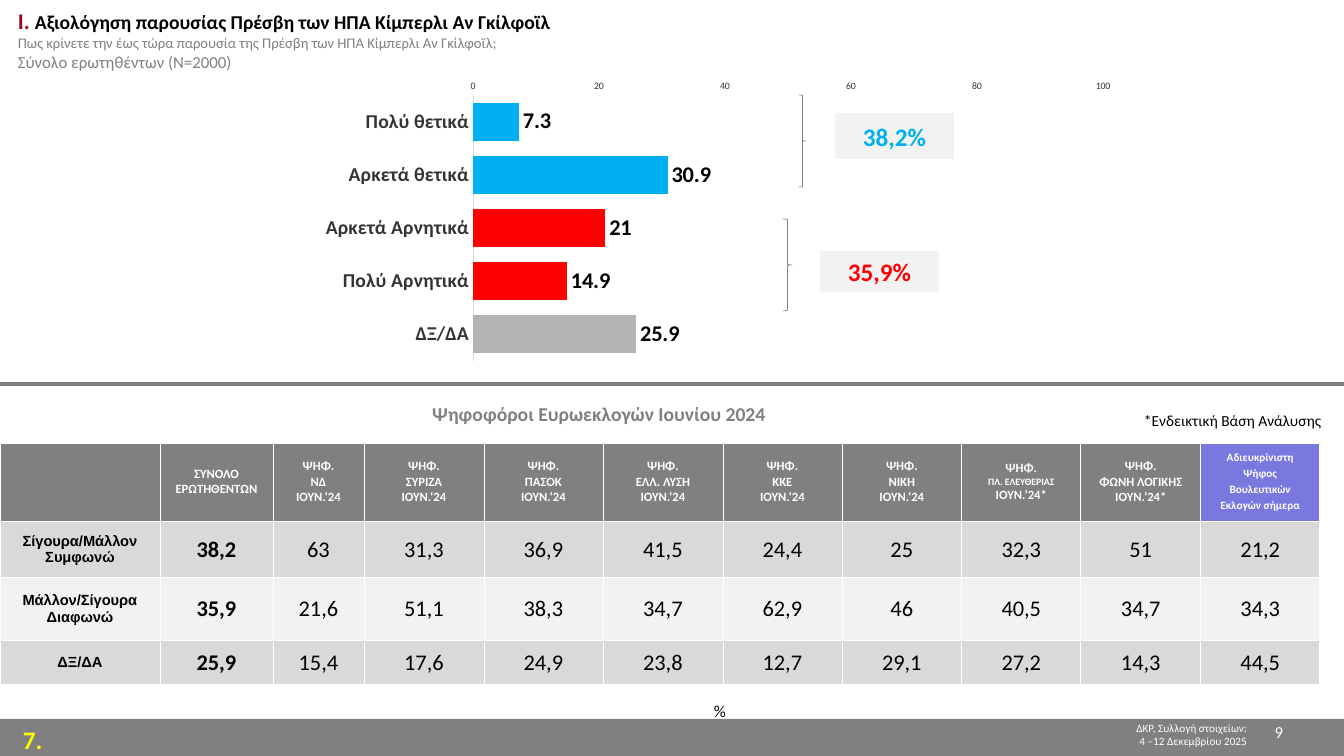
from lxml import etree
from pptx import Presentation
from pptx import util as u
from pptx.chart.data import CategoryChartData
from pptx.dml.color import RGBColor
from pptx.enum import chart as ch, shapes, text
from pptx.oxml import parse_xml
from pptx.oxml.ns import nsdecls, qn

PX = 914400 / 100.8
COLORS = {
    "white": "FFFFFF", "black": "000000", "gray": "808080", "dark": "333333",
    "yellow": "FFFF00", "maroon": "A50021", "positive": "00B0F0", "negative": "FF0000",
    "undecided": "B3B3B3", "axis": "D9D9D9", "band": "D9D9D9", "light": "F2F2F2",
    "violet": "7878DE",
}
C = {name: RGBColor.from_string(value) for name, value in COLORS.items()}
LEFT, CENTER, RIGHT = text.PP_ALIGN.LEFT, text.PP_ALIGN.CENTER, text.PP_ALIGN.RIGHT


def px(*lengths):
    return [u.Emu(round(n * PX)) for n in lengths]


def write(tf, lines, size, color, bold=False, align=LEFT, font="Calibri", gap=0):
    """Fill a text frame with one paragraph per line; gap is in points, between lines."""
    for i, line in enumerate(lines):
        p = tf.paragraphs[0] if i == 0 else tf.add_paragraph()
        p.alignment = align
        if i and gap:
            p.space_before = u.Pt(gap)
        p.font.name, p.font.size, p.font.bold = font, u.Pt(size), bold
        p.font.color.rgb = C[color]
        p.add_run().text = line


prs = Presentation()
prs.slide_width, prs.slide_height = px(1344, 756)
s = prs.slides.add_slide(prs.slide_layouts[6])

# Rectangles: footer band, title panel and the two totals
panels = {}
for name, box, fill in [
    ("footer", (0, 719, 1344, 37), "gray"),
    ("title", (8, 2, 1312, 92), "white"),
    ("38,2%", (835, 113, 119, 46), "light"),
    ("35,9%", (820, 251, 119, 41), "light"),
]:
    sp = s.shapes.add_shape(shapes.MSO_SHAPE.RECTANGLE, *px(*box))
    sp.shadow.inherit = False
    sp.fill.solid()
    sp.fill.fore_color.rgb = C[fill]
    sp.line.fill.background()
    panels[name] = sp

# Title panel
tf = panels["title"].text_frame
tf.word_wrap = True
tf.vertical_anchor = text.MSO_ANCHOR.TOP
p = tf.paragraphs[0]
p.alignment = LEFT
p.font.name, p.font.bold = "Calibri", True
for words, size, color in [
    ("Ι. ", 16, "maroon"),
    ("Αξιολόγηση παρουσίας Πρέσβη των ΗΠΑ Κίμπερλι Αν Γκίλφοϊλ", 14, "black"),
]:
    r = p.add_run()
    r.text = words
    r.font.size = u.Pt(size)
    r.font.color.rgb = C[color]
for line, size in [
    ("Πως κρίνετε την έως τώρα παρουσία της Πρέσβη των ΗΠΑ Κίμπερλι Αν Γκίλφοϊλ;", 10.5),
    ("Σύνολο ερωτηθέντων (Ν=2000)", 12),
]:
    p = tf.add_paragraph()
    p.alignment = LEFT
    p.font.name, p.font.size = "Calibri", u.Pt(size)
    p.font.color.rgb = C["gray"]
    p.add_run().text = line

# Text boxes
for box, lines, size, color, bold, align, wrap in [
    ((966, 716, 291, 37), ["ΔΚΡ, Συλλογή στοιχείων:", "4 –12 Δεκεμβρίου 2025"],
     8, "white", False, RIGHT, True),
    ((13, 719, 68, 40), ["7."], 18, "yellow", True, LEFT, True),
    ((704, 696, 32, 30), ["%"], 12, "black", False, LEFT, False),
    ((1013, 717, 280, 39), ["9"], 12, "white", False, RIGHT, True),
    ((267, 397, 664, 34), ["Ψηφοφόροι Ευρωεκλογών Ιουνίου 2024"], 14, "gray", True, CENTER, True),
    ((1134, 406, 203, 29), ["*Ενδεικτική Βάση Ανάλυσης"], 11, "black", False, LEFT, False),
]:
    tf = s.shapes.add_textbox(*px(*box)).text_frame
    tf.word_wrap = wrap
    write(tf, lines, size, color, bold, align)

# Table of voters by party
JUNE, JUNE_STAR = "ΙΟΥΝ.‘24", "ΙΟΥΝ.’24*"
header = [
    [], ["ΣΥΝΟΛΟ", "ΕΡΩΤΗΘΕΝΤΩΝ"],
    *[["ΨΗΦ.", party, JUNE] for party in ("NΔ", "ΣΥΡΙΖΑ", "ΠΑΣΟΚ", "ΕΛΛ. ΛΥΣΗ", "ΚΚΕ", "ΝΙΚΗ")],
    *[["ΨΗΦ.", party, JUNE_STAR] for party in ("ΠΛ. ΕΛΕΥΘΕΡΙΑΣ", "ΦΩΝΗ ΛΟΓΙΚΗΣ")],
    ["Αδιευκρίνιστη", "Ψήφος", "Βουλευτικών", "Εκλογών σήμερα"],
]
answers = [
    ["Σίγουρα/Μάλλον Συμφωνώ", "38,2", "63", "31,3", "36,9", "41,5", "24,4", "25", "32,3", "51", "21,2"],
    ["Μάλλον/Σίγουρα Διαφωνώ", "35,9", "21,6", "51,1", "38,3", "34,7", "62,9", "46", "40,5", "34,7", "34,3"],
    ["ΔΞ/ΔΑ", "25,9", "15,4", "17,6", "24,9", "23,8", "12,7", "29,1", "27,2", "14,3", "44,5"],
]
widths = [160, 113, 91] + [120, 119] * 4
heights = [78, 56, 63, 44]
last = len(widths) - 1
table = s.shapes.add_table(len(heights), len(widths),
                           *px(0, 443, sum(widths), sum(heights))).table
for column, width in zip(table.columns, px(*widths)):
    column.width = width
for row, height in zip(table.rows, px(*heights)):
    row.height = height
for i, values in enumerate([header] + answers):
    for j, value in enumerate(values):
        cell = table.cell(i, j)
        cell.vertical_anchor = text.MSO_ANCHOR.MIDDLE
        tcPr = cell._tc.get_or_add_tcPr()
        for side in ("lnL", "lnR", "lnT", "lnB"):
            tcPr.append(parse_xml(
                f'<a:{side} {nsdecls("a")} w="6350"><a:solidFill>'
                f'<a:srgbClr val="{COLORS["white"]}"/></a:solidFill></a:{side}>'))
        cell.fill.solid()
        if i == 0:
            cell.fill.fore_color.rgb = C["violet" if j == last else "gray"]
            write(cell.text_frame, value, 8 if j == last else 9, "white", True, CENTER,
                  gap=1.6 if j == last else 0)
            continue
        cell.fill.fore_color.rgb = C["light" if i == 2 else "band"]
        cell.margin_left, cell.margin_right, cell.margin_top, cell.margin_bottom = px(1, 1, 1, 0)
        size, font = (10.5, "Arial") if j == 0 else (16, "Calibri")
        write(cell.text_frame, [value], size, "black", j < 2, CENTER, font)
table.cell(0, 8).text_frame.paragraphs[1].font.size = u.Pt(7)

# Bar chart of ratings
ratings = [
    ("Πολύ θετικά", 7.3, "positive"), ("Αρκετά θετικά", 30.9, "positive"),
    ("Αρκετά Αρνητικά", 21, "negative"), ("Πολύ Αρνητικά", 14.9, "negative"),
    ("ΔΞ/ΔΑ", 25.9, "undecided"),
]
data = CategoryChartData()
data.categories = [label for label, _, _ in ratings]
data.add_series("Series 1", [value for _, value, _ in ratings])
chart = s.shapes.add_chart(ch.XL_CHART_TYPE.BAR_CLUSTERED, *px(148, 52, 1016, 332), data).chart
chart.has_legend = chart.has_title = False
chart.font.name = "Calibri"
plot = chart.plots[0]
plot.gap_width, plot.overlap, plot.vary_by_categories = 40, -51, False
series = plot.series[0]
series.format.fill.solid()
series.format.fill.fore_color.rgb = C["positive"]
for i, (_, _, color) in enumerate(ratings):
    fill = series.points[i].format.fill
    fill.solid()
    fill.fore_color.rgb = C[color]
plot.has_data_labels = True
labels = plot.data_labels
labels.show_value = True
labels.position = ch.XL_LABEL_POSITION.OUTSIDE_END

cat, val = chart.category_axis, chart.value_axis
cat.reverse_order = True
cat.format.line.color.rgb = C["axis"]
cat.format.line.width = u.Pt(0.75)
val.minimum_scale, val.maximum_scale, val.major_unit = 0, 100, 20
val.format.line.fill.background()
for axis in (cat, val):
    axis.has_major_gridlines = False
    axis.major_tick_mark = axis.minor_tick_mark = ch.XL_TICK_MARK.NONE
for font, size, color, bold in [
    (labels.font, 16, "black", True),
    (cat.tick_labels.font, 14, "dark", True),
    (val.tick_labels.font, 7, "dark", False),
]:
    font.name, font.size, font.bold = "Calibri", u.Pt(size), bold
    font.color.rgb = C[color]

plot_area = chart._chartSpace.chart.plotArea
for old in plot_area.findall(qn("c:layout")):
    plot_area.remove(old)
plot_area.insert(0, parse_xml(
    f'<c:layout {nsdecls("c")}><c:manualLayout><c:layoutTarget val="inner"/>'
    '<c:xMode val="edge"/><c:yMode val="edge"/><c:x val="0.32"/><c:y val="0.13"/>'
    '<c:w val="0.62"/><c:h val="0.8"/></c:manualLayout></c:layout>'))

# Divider, braces and totals
divider = s.shapes.add_connector(shapes.MSO_CONNECTOR.STRAIGHT, *px(0, 384, 1344, 384))
divider.line.color.rgb = C["gray"]
divider.line.width = u.Pt(2.25)
etree.SubElement(divider._element.spPr, qn("a:effectLst"))
for box in [(799, 95, 7, 92), (783, 219, 9, 92)]:
    brace = s.shapes.add_shape(shapes.MSO_SHAPE.RIGHT_BRACE, *px(*box))
    brace.shadow.inherit = False
    brace.fill.background()
    brace.line.color.rgb = C["gray"]
    brace.line.width = u.Pt(0.5)
for total, color in [("38,2%", "positive"), ("35,9%", "negative")]:
    tf = panels[total].text_frame
    tf.word_wrap = False
    tf.vertical_anchor = text.MSO_ANCHOR.MIDDLE
    write(tf, [total], 18, color, True, CENTER)

prs.save("out.pptx")
